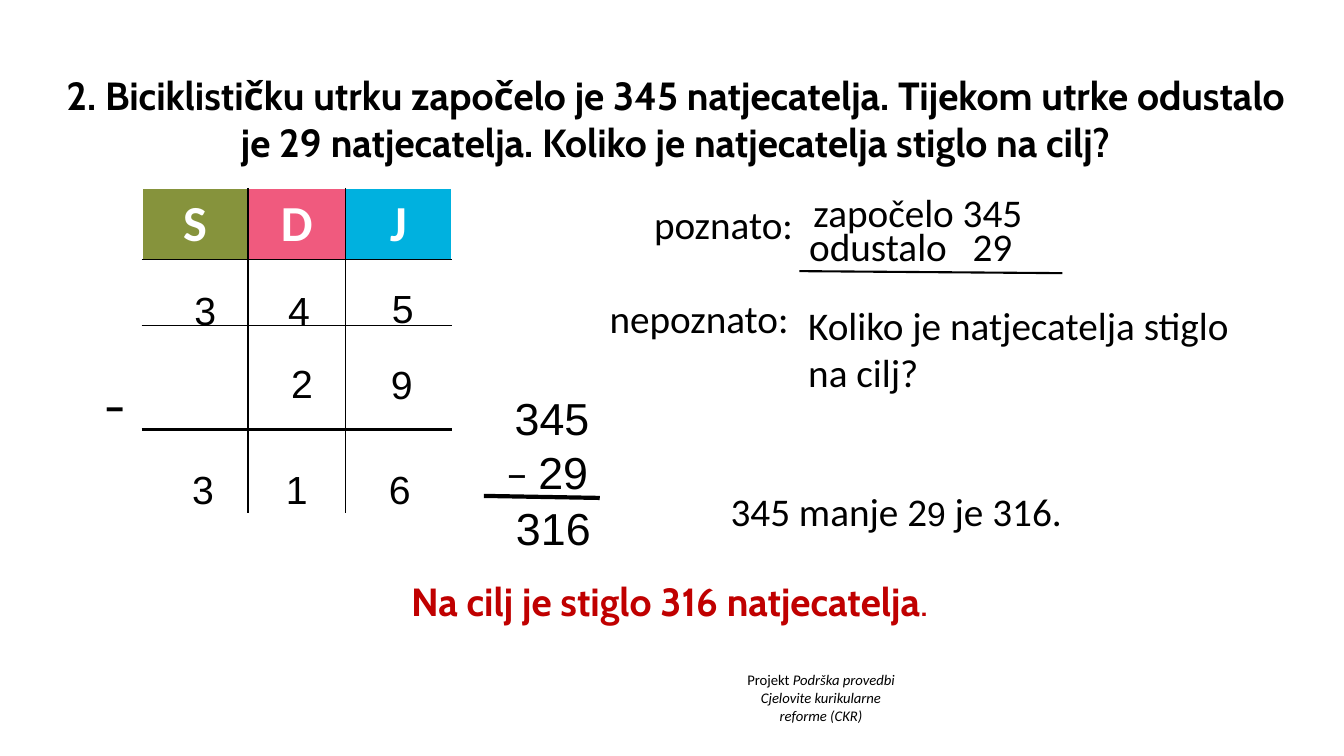
from lxml import etree
from pptx import Presentation
from pptx.dml.color import RGBColor
from pptx.enum.shapes import MSO_CONNECTOR
from pptx.enum.text import MSO_ANCHOR, PP_ALIGN
from pptx.oxml.ns import qn
from pptx.util import Pt

LEFT, CENTER, RIGHT = PP_ALIGN.LEFT, PP_ALIGN.CENTER, PP_ALIGN.RIGHT
MIDDLE = MSO_ANCHOR.MIDDLE
STRAIGHT = MSO_CONNECTOR.STRAIGHT
BLACK, WHITE, RED = "000000", "FFFFFF", "C00000"
BODY = {"name": "Calibri", "size": Pt(28), "bold": False}
DIGIT = {"name": "Arial", "size": Pt(28)}
SUM = {"name": "Arial", "size": Pt(32)}
HEADING = {"name": "Cabin", "size": Pt(28), "bold": True}
FOOTER = {"name": "Calibri", "size": Pt(10.5)}
COLUMN_HEAD = {"name": "Calibri", "size": Pt(36), "bold": True}


def rgb(value):
    return RGBColor.from_string(value)


def add_run(p, text, fmt, color=BLACK):
    r = p.add_run()
    r.text = text
    for key, value in fmt.items():
        setattr(r.font, key, value)
    r.font.color.rgb = rgb(color)


def add_text(s, box, paragraphs, align=LEFT, color=BLACK):
    tf = s.shapes.add_textbox(*map(Pt, box)).text_frame
    tf.word_wrap = True
    for i, runs in enumerate(paragraphs):
        p = tf.add_paragraph() if i else tf.paragraphs[0]
        p.alignment = align
        for text, fmt in runs:
            add_run(p, text, fmt, color)
    return tf


def add_line(s, ends, width):
    sp = s.shapes.add_connector(STRAIGHT, *map(Pt, ends))
    sp.line.color.rgb = rgb(BLACK)
    sp.line.width = Pt(width)
    etree.SubElement(sp._element.spPr, qn("a:effectLst"))


def add_border(cell, side, color, width):
    tag = qn(f"a:ln{side}")
    ln = etree.SubElement(cell._tc.get_or_add_tcPr(), tag, w=str(Pt(width)))
    fill = etree.SubElement(ln, qn("a:solidFill"))
    etree.SubElement(fill, qn("a:srgbClr"), val=color)


def add_place_value_table(s):
    heads = [("S", "86933C"), ("D", "F05A7E"), ("J", "00B1DF")]
    widths = [75.6, 69.84, 75.6]
    heights = [50.4, 47.52, 74.16, 60.48]
    rules = [(WHITE, 1), (BLACK, 0.75), (BLACK, 1), (BLACK, 3), (WHITE, 1)]
    uprights = [(WHITE, 1), (BLACK, 1), (BLACK, 1), (WHITE, 1)]
    box = (101.52, 134.64, sum(widths), sum(heights))
    table = s.shapes.add_table(len(heights), len(widths), *map(Pt, box)).table
    table.horz_banding = False
    for j, width in enumerate(widths):
        table.columns[j].width = Pt(width)
    for i, height in enumerate(heights):
        table.rows[i].height = Pt(height)
        for j, (letter, color) in enumerate(heads):
            cell = table.cell(i, j)
            add_border(cell, "L", *uprights[j])
            add_border(cell, "R", *uprights[j + 1])
            add_border(cell, "T", *rules[i])
            add_border(cell, "B", *rules[i + 1])
            cell.fill.solid()
            cell.fill.fore_color.rgb = rgb(WHITE if i else color)
            if i == 0:
                cell.vertical_anchor = MIDDLE
                p = cell.text_frame.paragraphs[0]
                p.alignment = CENTER
                add_run(p, letter, COLUMN_HEAD, WHITE)


def add_digits(s):
    narrow, wide = 23.76, 48.24
    digits = [
        ("3", 131.76, 200.88, narrow), ("4", 198.72, 200.88, narrow),
        ("5", 272.88, 199.44, narrow), ("2", 200.88, 253.44, narrow),
        ("9", 272.16, 254.16, narrow), ("3", 120.96, 329.04, wide),
        ("1", 187.92, 329.04, wide), ("6", 261.36, 329.04, wide),
    ]
    for digit, left, top, width in digits:
        add_text(s, (left, top, width, 41), [[(digit, DIGIT)]], CENTER)
    minus = {**BODY, "size": Pt(32), "bold": True}
    add_text(s, (66.96, 266.4, 36, 45.36), [[("–", minus)]])


def add_written_subtraction(s):
    dash = {**SUM, "name": "Calibri"}
    rows = [[("345", SUM)], [("– ", dash), ("29", SUM)], [("316", SUM)]]
    tf = add_text(s, (354.24, 275.5, 82.8, 160.8), rows)
    for p, indent in zip(tf.paragraphs, (6.3, 0, 7.2)):
        pPr = p._p.get_or_add_pPr()
        pPr.set("marL", str(Pt(indent)))
        pPr.set("indent", "0")
    tf.paragraphs[2].space_before = Pt(1.5)
    add_line(s, (345.6, 354.24, 428.4, 355.68), 3)


def add_known_values(s):
    left, width, height = 570.96, 166.32, 41
    add_text(s, (left, 131.04, width, height), [[("započelo 345", BODY)]], RIGHT)
    tf = add_text(s, (left, 155.52, width, height), [[("odustalo\t29", BODY)]])
    tabs = etree.SubElement(tf.paragraphs[0]._p.get_or_add_pPr(), qn("a:tabLst"))
    etree.SubElement(tabs, qn("a:tab"), pos=str(Pt(145)), algn="r")
    add_line(s, (570.96, 193.68, 758.88, 195.12), 1.5)


def main():
    prs = Presentation()
    prs.slide_width, prs.slide_height = Pt(960), Pt(540)
    s = prs.slides.add_slide(prs.slide_layouts[6])

    italic = {**FOOTER, "italic": True}
    add_text(s, (503.28, 475.92, 166.32, 45.36), [
        [("Projekt ", FOOTER), ("Podrška provedbi", italic)],
        [("Cjelovite kurikularne", italic)],
        [("reforme (CKR)", italic)],
    ], CENTER)
    add_text(s, (35.28, 47.52, 894.24, 68.4), [[(
        "2. Biciklističku utrku započelo je 345 natjecatelja. "
        "Tijekom utrke odustalo je 29 natjecatelja. "
        "Koliko je natjecatelja stiglo na cilj?", HEADING)]], CENTER)

    add_place_value_table(s)
    add_digits(s)
    add_written_subtraction(s)

    add_text(s, (460.08, 139.68, 115.92, 41), [[("poznato:", BODY)]])
    add_known_values(s)
    add_text(s, (428.4, 206.64, 151.2, 41), [[("nepoznato:", BODY)]])
    add_text(s, (570.24, 211.68, 334.08, 74.88),
             [[("Koliko je natjecatelja stiglo na cilj?", BODY)]])
    nine = {**DIGIT, "size": Pt(24)}
    add_text(s, (514.8, 344.88, 280.08, 74.88),
             [[("345 manje 2", BODY), ("9", nine), (" je 316.", BODY)]])
    add_text(s, (286.56, 408.96, 508.32, 70.56), [[
        ("Na cilj je stiglo 316 natjecatelja", HEADING),
        (".", {**HEADING, "bold": False})]], color=RED)

    prs.save("out.pptx")


if __name__ == "__main__":
    main()
